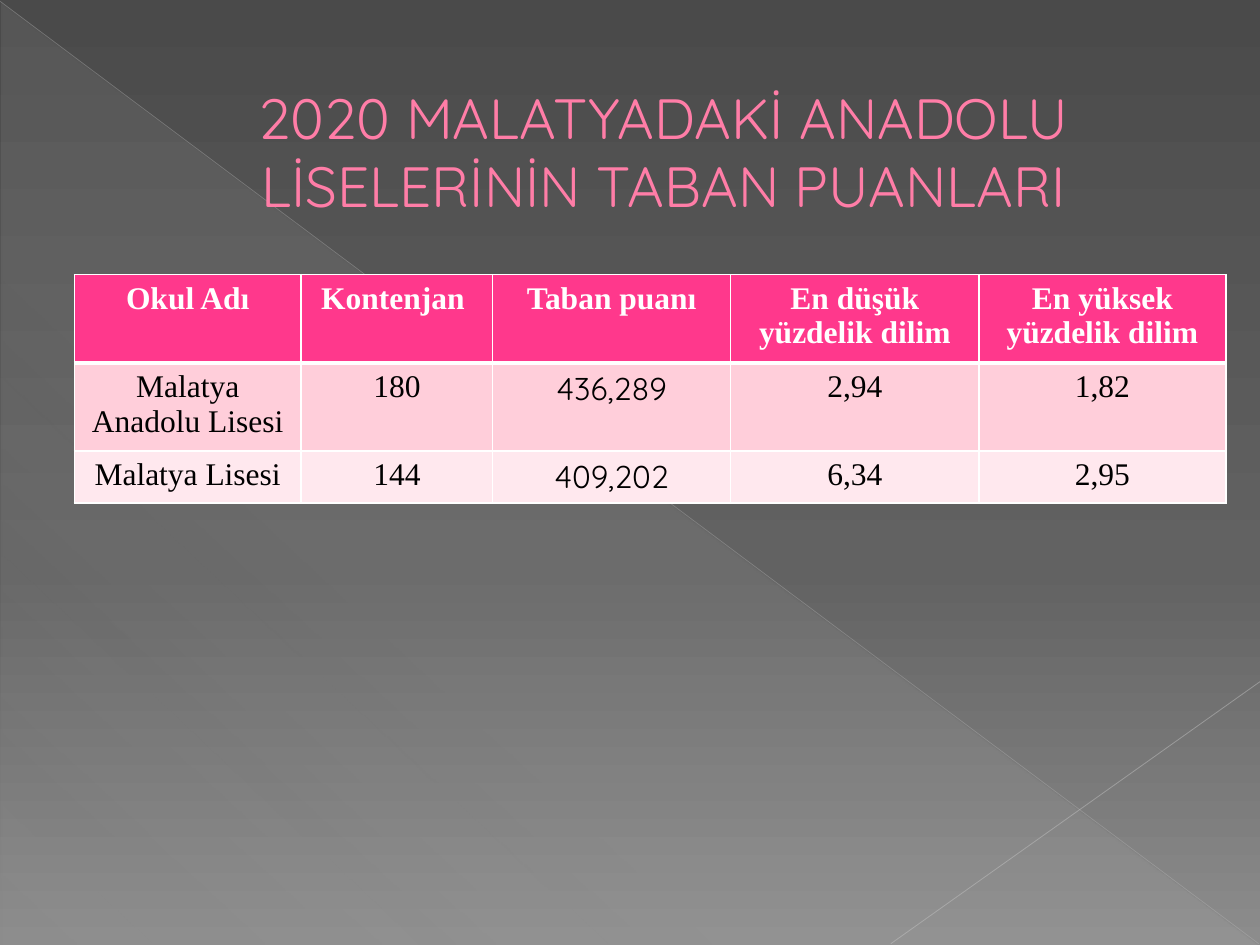
import pptx
import pptx.dml.color
import pptx.enum.dml
import pptx.enum.shapes
import pptx.enum.text
import pptx.oxml
import pptx.oxml.ns
import pptx.util
from pptx.dml.color import RGBColor
from pptx.util import Inches

WHITE = RGBColor(0xFF, 0xFF, 0xFF)
BLACK = RGBColor(0x00, 0x00, 0x00)
PINK = RGBColor(0xFF, 0x38, 0x8C)
LIGHT_PINK = RGBColor(0xFF, 0xCE, 0xDA)
PALE_PINK = RGBColor(0xFF, 0xE8, 0xEE)
TITLE_PINK = RGBColor(0xFF, 0x7D, 0xA7)
TITLE_OUTLINE = RGBColor(0xB1, 0x27, 0x61)
DARK_GRAY = RGBColor(0x4A, 0x4A, 0x4A)
MIDDLE_GRAY = RGBColor(0x62, 0x62, 0x62)
LIGHT_GRAY = RGBColor(0x8C, 0x8C, 0x8C)
SILVER = RGBColor(0xD2, 0xD2, 0xD2)
LONG_LINE_GRAY = RGBColor(0xBF, 0xBF, 0xBF)
SHORT_LINE_GRAY = RGBColor(0xC6, 0xC6, 0xC6)
qn = pptx.oxml.ns.qn


def add_color(parent, color, alpha=100):
    element = parent.makeelement(qn("a:srgbClr"), {"val": str(color)})
    parent.append(element)
    if alpha < 100:
        element.append(element.makeelement(qn("a:alpha"), {"val": str(alpha * 1000)}))


def set_gradient(fill, element, stops, angle):
    fill.gradient()
    fill.gradient_angle = angle
    stop_list = next(element.iter(qn("a:gsLst")))
    for stop in list(stop_list):
        stop_list.remove(stop)
    for position, color, alpha in stops:
        stop = stop_list.makeelement(qn("a:gs"), {"pos": str(position * 1000)})
        stop_list.append(stop)
        add_color(stop, color, alpha)


presentation = pptx.Presentation()
presentation.slide_width = Inches(10)
presentation.slide_height = Inches(7.5)
slide = presentation.slides.add_slide(presentation.slide_layouts[6])
set_gradient(
    slide.background.fill,
    slide.element,
    [(0, DARK_GRAY, 100), (60, MIDDLE_GRAY, 100), (100, LIGHT_GRAY, 100)],
    270,
)

triangle = slide.shapes.add_shape(
    pptx.enum.shapes.MSO_SHAPE.RIGHT_TRIANGLE,
    Inches(0.01), Inches(0.02), Inches(9.98), Inches(7.48),
)
triangle.shadow.inherit = False
triangle.line.fill.background()
set_gradient(
    triangle.fill,
    triangle.element.spPr,
    [(0, SILVER, 10), (70, SILVER, 8), (100, SILVER, 1)],
    227,
)

for start_x, start_y, end_x, end_y, color, width, alpha in [
    (0, 0.01, 9.99, 7.49, LONG_LINE_GRAY, 0.39, 35),
    (10, 5.41, 7.07, 7.49, SHORT_LINE_GRAY, 0.47, 45),
]:
    line = slide.shapes.add_connector(
        pptx.enum.shapes.MSO_CONNECTOR.STRAIGHT,
        Inches(start_x), Inches(start_y), Inches(end_x), Inches(end_y),
    )
    line.line.width = pptx.util.Pt(width)
    line.line.fill.solid()
    properties = line.element.spPr
    solid_fill = next(properties.iter(qn("a:solidFill")))
    add_color(solid_fill, color, alpha)
    properties.append(properties.makeelement(qn("a:effectLst"), {}))

title = slide.shapes.add_textbox(Inches(0.5), Inches(0.77), Inches(9), Inches(0.85))
title.text_frame.word_wrap = True
title.text_frame.vertical_anchor = pptx.enum.text.MSO_ANCHOR.MIDDLE
paragraph = title.text_frame.paragraphs[0]
paragraph.alignment = pptx.enum.text.PP_ALIGN.CENTER
paragraph.font.name = "Quicksand"
paragraph.font.size = pptx.util.Pt(32.4)
paragraph.font.color.rgb = TITLE_PINK
paragraph._p.get_or_add_pPr().set("marL", str(Inches(0.53)))
run = paragraph.add_run()
run.text = "2020 MALATYADAKİ ANADOLU LİSELERİNİN TABAN PUANLARI"
run_properties = run._r.get_or_add_rPr()
outline = run_properties.makeelement(qn("a:ln"), {"w": str(pptx.util.Pt(0.5))})
run_properties.insert(0, outline)
outline_fill = outline.makeelement(qn("a:solidFill"), {})
outline.append(outline_fill)
add_color(outline_fill, TITLE_OUTLINE)

rows = [
    ["Okul Adı", "Kontenjan ", "Taban puanı", "En düşük yüzdelik dilim", "En yüksek yüzdelik dilim"],
    ["Malatya Anadolu Lisesi", "180", "436,289", "2,94", "1,82"],
    ["Malatya Lisesi", "144", "409,202", "6,34", "2,95"],
]
column_widths = [1.8, 1.52, 1.89, 1.97, 1.96]
row_heights = [0.65, 0.65, 0.41]
row_fills = [PINK, LIGHT_PINK, PALE_PINK]
table = slide.shapes.add_table(
    3, 5, Inches(0.59), Inches(2.18), Inches(sum(column_widths)), Inches(sum(row_heights))
).table
for column, width in zip(table.columns, column_widths):
    column.width = Inches(width)
for row_index, values in enumerate(rows):
    table.rows[row_index].height = Inches(row_heights[row_index])
    is_header = row_index == 0
    for column_index, value in enumerate(values):
        cell = table.cell(row_index, column_index)
        cell_properties = cell._tc.get_or_add_tcPr()
        border_widths = {
            "a:lnL": 1,
            "a:lnR": 1,
            "a:lnT": 3 if row_index == 1 else 1,
            "a:lnB": 3 if is_header else 1,
        }
        for side, width in border_widths.items():
            border = cell_properties.makeelement(qn(side), {"w": str(pptx.util.Pt(width))})
            cell_properties.append(border)
            border_fill = border.makeelement(qn("a:solidFill"), {})
            border.append(border_fill)
            add_color(border_fill, WHITE)
        cell.fill.solid()
        cell.fill.fore_color.rgb = row_fills[row_index]
        cell.text = value
        paragraph = cell.text_frame.paragraphs[0]
        paragraph.alignment = pptx.enum.text.PP_ALIGN.CENTER
        is_score = column_index == 2 and not is_header
        paragraph.font.name = "Quicksand" if is_score else "Times New Roman"
        paragraph.font.size = pptx.util.Pt(18)
        paragraph.font.bold = is_header
        paragraph.font.color.rgb = WHITE if is_header else BLACK

presentation.save("out.pptx")
